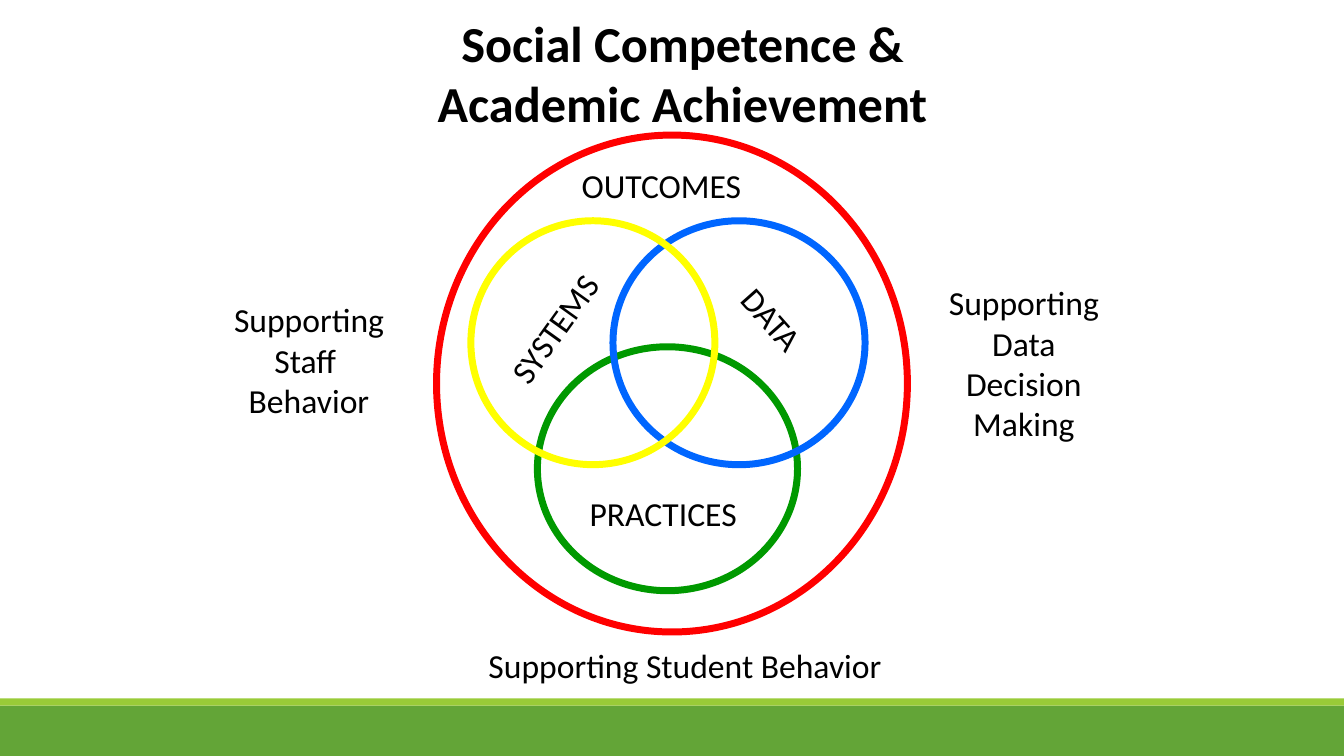
"""Build the slide of overlapping circles for outcomes, systems, data and practices."""
from pptx import Presentation
from pptx.dml.color import RGBColor
from pptx.enum.shapes import MSO_SHAPE as Shape
from pptx.enum.text import MSO_ANCHOR as Anchor, MSO_AUTO_SIZE as AutoSize, PP_ALIGN as Align
from pptx.util import Pt

PX = 9144
BLACK = RGBColor(0x00, 0x00, 0x00)
DARK_GREEN = RGBColor(0x63, 0xA5, 0x37)
LIME = RGBColor(0x99, 0xCB, 0x38)
GREEN = RGBColor(0x00, 0x99, 0x00)
BLUE = RGBColor(0x00, 0x66, 0xFF)
RED = RGBColor(0xFF, 0x00, 0x00)
YELLOW = RGBColor(0xFF, 0xFF, 0x00)


def px(*lengths):
    return [length * PX for length in lengths]


def write(frame, text, size, align, bold=False):
    frame.text = text
    for paragraph in frame.paragraphs:
        paragraph.alignment = align
        for run in paragraph.runs:
            run.font.name = "Calibri"
            run.font.size = Pt(size)
            run.font.bold = bold
            run.font.color.rgb = BLACK


deck = Presentation()
deck.slide_width, deck.slide_height = px(1333, 750)
slide = deck.slides.add_slide(deck.slide_layouts[5])
shapes = slide.shapes

heading = shapes.title
heading.left, heading.top, heading.width, heading.height = px(306, 7, 742, 131)
write(heading.text_frame, "Social Competence &\nAcademic Achievement", 36, Align.CENTER, True)
heading.text_frame.vertical_anchor = Anchor.TOP
heading.text_frame.auto_size = AutoSize.NONE

for top, height, color in [(700, 50, DARK_GREEN), (693, 7, LIME)]:
    band = shapes.add_shape(Shape.RECTANGLE, *px(0, top, 1333, height))
    band.shadow.inherit = False
    band.fill.solid()
    band.fill.fore_color.rgb = color
    band.line.fill.background()

circles = [
    (533, 344, 258, 242, GREEN),
    (608, 219, 250, 242, BLUE),
    (433, 134, 467, 493, RED),
    (467, 219, 242, 242, YELLOW),
]
for left, top, width, height, color in circles:
    circle = shapes.add_shape(Shape.OVAL, *px(left, top, width, height))
    circle.shadow.inherit = False
    circle.fill.background()
    circle.line.color.rgb = color
    circle.line.width = Pt(5)

labels = [
    ("SYSTEMS", 478, 300, 144, 50, 305.7, Align.LEFT),
    ("PRACTICES", 575, 484, 167, 51, 0, Align.LEFT),
    ("DATA", 721, 292, 91, 50, 48.4, Align.LEFT),
    ("OUTCOMES", 567, 159, 180, 51, 0, Align.LEFT),
    ("Supporting\nStaff \nBehavior", 221, 292, 171, 131, 0, Align.CENTER),
    ("Supporting\nData\nDecision\nMaking", 930, 275, 171, 172, 0, Align.CENTER),
    ("Supporting Student Behavior", 431, 635, 497, 50, 0, Align.CENTER),
]
for text, left, top, width, height, angle, align in labels:
    label = shapes.add_textbox(*px(left, top, width, height))
    label.rotation = angle
    label.text_frame.word_wrap = width > 400
    label.text_frame.auto_size = AutoSize.SHAPE_TO_FIT_TEXT
    write(label.text_frame, text, 24, align)

deck.save("out.pptx")
